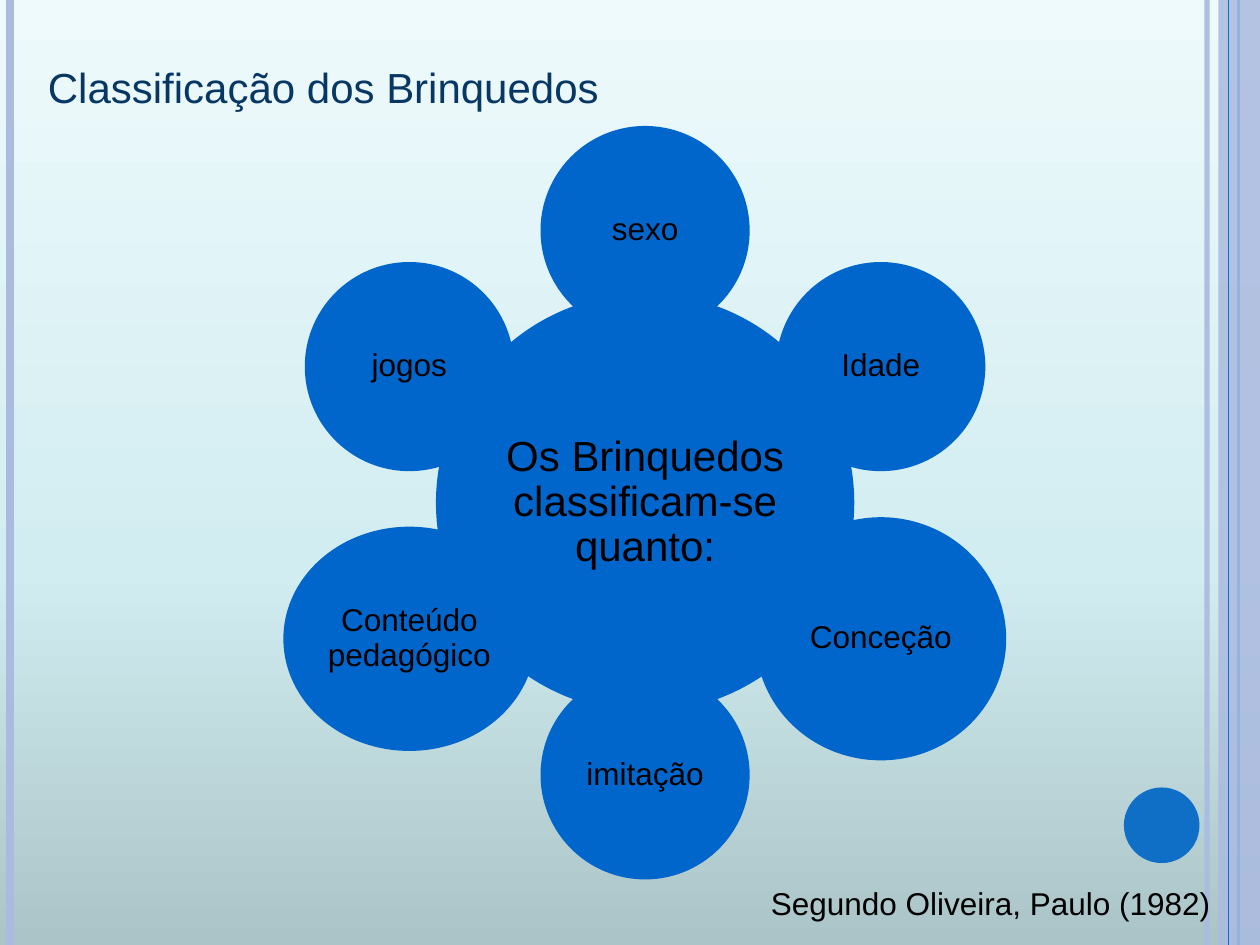
from copy import deepcopy
from math import cos, radians, sin

from pptx import Presentation
from pptx.dml.color import RGBColor
from pptx.enum.shapes import MSO_CONNECTOR, MSO_SHAPE
from pptx.enum.text import MSO_ANCHOR, MSO_AUTO_SIZE, PP_ALIGN
from pptx.oxml.ns import qn
from pptx.oxml.xmlchemy import OxmlElement
from pptx.util import Inches, Pt

COLORS = {
    "petal": "0066CC", "accent": "0F6FC6", "band": "ABBBDF",
    "title": "083763", "text": "000000",
    "bottom": "AAC4C7", "middle": "D2EDF1", "top": "EEFAFC",
}
FONT = "Arial"
COLS, ROWS = 100, 75


class Deck:
    def __init__(self, width=10, height=7.5):
        self.prs = Presentation()
        self.prs.slide_width, self.prs.slide_height = Inches(width), Inches(height)
        self.s = self.prs.slides.add_slide(self.prs.slide_layouts[5])

    def x(self, col):
        return round(self.prs.slide_width * col / COLS)

    def y(self, row):
        return round(self.prs.slide_height * row / ROWS)

    def box(self, left, top, width, height):
        return self.x(left), self.y(top), self.x(width), self.y(height)

    def rgb(self, name):
        return RGBColor.from_string(COLORS[name])

    def background(self, stops):
        fill = self.s.background.fill
        fill.gradient()
        fill.gradient_angle = 90
        gs_list = self.s.element.find(".//" + qn("a:gsLst"))
        gs_list.insert(1, deepcopy(gs_list[0]))
        for stop, (position, color) in zip(fill.gradient_stops, stops):
            stop.position = position
            stop.color.rgb = self.rgb(color)

    def opacity(self, sp, percent):
        color = sp._element.spPr.find(".//" + qn("a:srgbClr"))
        alpha = OxmlElement("a:alpha")
        alpha.set("val", str(percent * 1000))
        color.append(alpha)

    def rule(self, col, color, weight, opacity=100):
        sp = self.s.shapes.add_connector(
            MSO_CONNECTOR.STRAIGHT, self.x(col), 0, self.x(col), self.y(ROWS))
        sp.line.color.rgb = self.rgb(color)
        sp.line.width = Pt(weight)
        if opacity < 100:
            self.opacity(sp, opacity)
        sp._element.spPr.append(OxmlElement("a:effectLst"))

    def shape(self, kind, box, color, opacity=100):
        sp = self.s.shapes.add_shape(kind, *self.box(*box))
        sp.shadow.inherit = False
        sp.fill.solid()
        sp.fill.fore_color.rgb = self.rgb(color)
        sp.line.fill.background()
        if opacity < 100:
            self.opacity(sp, opacity)
        return sp

    def text(self, tf, text, size, color="text", align=PP_ALIGN.LEFT):
        p = tf.paragraphs[0]
        p.alignment = align
        r = p.add_run()
        r.text = text
        r.font.name, r.font.size = FONT, Pt(size)
        r.font.color.rgb = self.rgb(color)
        return p

    def circle(self, cx, cy, width, height, text, size):
        sp = self.shape(MSO_SHAPE.OVAL,
                        (cx - width / 2, cy - height / 2, width, height), "petal")
        tf = sp.text_frame
        tf.word_wrap = True
        tf.vertical_anchor = MSO_ANCHOR.MIDDLE
        tf.margin_left = tf.margin_right = Inches(0.03)
        tf.margin_top = tf.margin_bottom = Inches(0.03)
        self.text(tf, text, size, align=PP_ALIGN.CENTER).line_spacing = 0.9

    def title(self, box, text):
        sp = self.s.shapes.title
        sp.left, sp.top, sp.width, sp.height = self.box(*box)
        tf = sp.text_frame
        tf.word_wrap = False
        tf.auto_size = MSO_AUTO_SIZE.NONE
        tf.vertical_anchor = MSO_ANCHOR.TOP
        self.text(tf, text, 24, "title")

    def note(self, box, text):
        tf = self.s.shapes.add_textbox(*self.box(*box)).text_frame
        tf.word_wrap = True
        self.text(tf, text, 18)


def main():
    deck = Deck()
    deck.background([(0, "bottom"), (0.4, "middle"), (1, "top")])

    deck.rule(95.8, "band", 3, 93)
    deck.rule(0.8, "band", 4.5)
    deck.rule(98.3, "accent", 1.5)
    deck.shape(MSO_SHAPE.RECTANGLE, (96.7, 0, 3.3, ROWS), "band", 87)
    deck.rule(97.5, "accent", 0.75)
    deck.shape(MSO_SHAPE.OVAL, (89.2, 62.5, 6, 6), "accent")

    cx, cy, hub, orbit = 51.2, 39.9, 33.2, 21.6
    petal = hub / 2
    deck.circle(cx, cy, hub, hub, "Os Brinquedos classificam-se quanto:", 24)
    petals = [
        ("sexo", petal, petal), ("Idade", petal, petal),
        ("Conceção", 19.9, 19.3), ("imitação", petal, petal),
        ("Conteúdo pedagógico", 20, 17.8), ("jogos", petal, petal),
    ]
    for i, (text, width, height) in enumerate(petals):
        angle = radians(360 / len(petals) * i)
        deck.circle(cx + orbit * sin(angle), cy - orbit * cos(angle),
                    width, height, text, 18)

    deck.title((2.8, 4.4, 47.1, 5), "Classificação dos Brinquedos")
    deck.note((60.2, 69.7, 37, 4), "Segundo Oliveira, Paulo (1982)")
    deck.prs.save("out.pptx")


if __name__ == "__main__":
    main()
